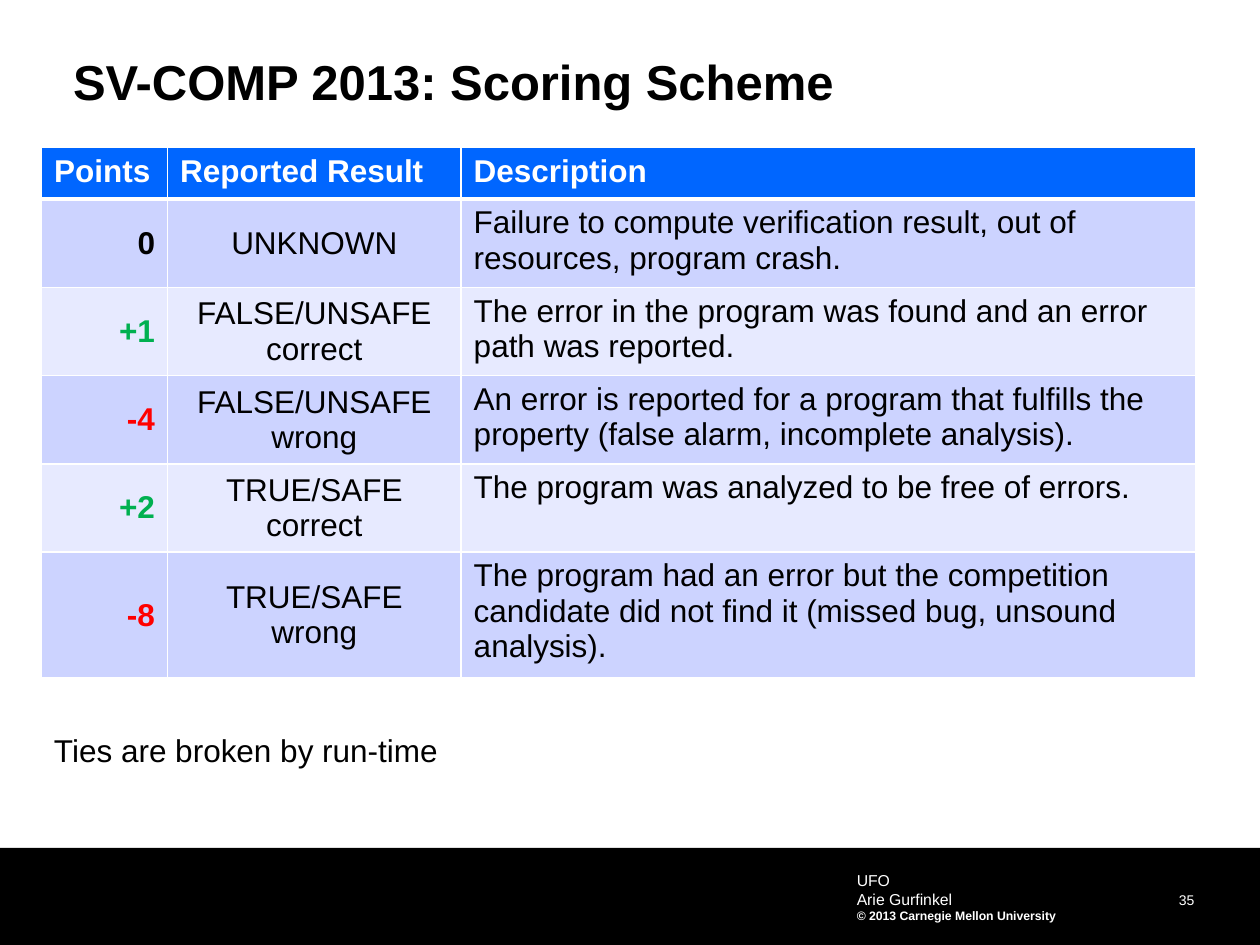
from dataclasses import dataclass

from lxml import etree
from pptx import Presentation
from pptx.dml.color import RGBColor
from pptx.enum.shapes import MSO_SHAPE
from pptx.enum.text import MSO_ANCHOR, MSO_AUTO_SIZE, PP_ALIGN
from pptx.oxml.ns import qn
from pptx.util import Inches, Pt

RECTANGLE = MSO_SHAPE.RECTANGLE
TOP, MIDDLE = MSO_ANCHOR.TOP, MSO_ANCHOR.MIDDLE
LEFT, CENTER, RIGHT = PP_ALIGN.LEFT, PP_ALIGN.CENTER, PP_ALIGN.RIGHT
FIT_SHAPE = MSO_AUTO_SIZE.SHAPE_TO_FIT_TEXT

SLIDE_WIDTH, SLIDE_HEIGHT = 10, 7.5
MARGIN = 0.33
COLUMN_WIDTHS = (1, 2.33, 5.83)
ROW_HEIGHT = 0.41


@dataclass(frozen=True)
class Theme:
    font: str = "Arial"
    title_size: float = 28
    body_size: float = 18
    footer_size: float = 9
    number_size: float = 8
    copyright_size: float = 7
    black: str = "000000"
    white: str = "FFFFFF"
    header: str = "0066FF"
    odd_row: str = "CCD3FF"
    even_row: str = "E7EAFF"
    gain: str = "00B050"
    loss: str = "FF0000"


THEME = Theme()

HEADINGS = ("Points", "Reported Result", "Description")
SCORES = (
    ("0", "UNKNOWN",
     "Failure to compute verification result, out of resources, program crash."),
    ("+1", "FALSE/UNSAFE correct",
     "The error in the program was found and an error path was reported."),
    ("-4", "FALSE/UNSAFE wrong",
     "An error is reported for a program that fulfills the property "
     "(false alarm, incomplete analysis)."),
    ("+2", "TRUE/SAFE correct",
     "The program was analyzed to be free of errors."),
    ("-8", "TRUE/SAFE wrong",
     "The program had an error but the competition candidate did not find it "
     "(missed bug, unsound analysis)."),
)


def write(paragraph, text, size, color, bold=False, align=LEFT):
    paragraph.text = text
    paragraph.alignment = align
    font = paragraph.font
    font.name, font.size, font.bold = THEME.font, Pt(size), bold
    font.color.rgb = RGBColor.from_string(color)


def add_text(slide, box, lines, insets=(0.1, 0.05), anchor=TOP, wrap=True,
             align=LEFT, spacing=None):
    """Add a text box; each line is (text, size, color, bold)."""
    frame = slide.shapes.add_textbox(*map(Inches, box)).text_frame
    frame.word_wrap = wrap
    frame.auto_size = FIT_SHAPE
    frame.vertical_anchor = anchor
    frame.margin_left = frame.margin_right = Inches(insets[0])
    frame.margin_top = frame.margin_bottom = Inches(insets[1])
    for index, line in enumerate(lines):
        paragraph = frame.add_paragraph() if index else frame.paragraphs[0]
        paragraph.line_spacing = spacing
        write(paragraph, *line, align=align)


def set_borders(cell, top, bottom):
    properties = cell._tc.get_or_add_tcPr()
    for side, width in (("L", 1), ("R", 1), ("T", top), ("B", bottom)):
        line = etree.SubElement(properties, qn(f"a:ln{side}"), w=str(Pt(width)))
        fill = etree.SubElement(line, qn("a:solidFill"))
        etree.SubElement(fill, qn("a:srgbClr"), val=THEME.white)


def score_color(points):
    return {"+": THEME.gain, "-": THEME.loss}.get(points[0], THEME.black)


def style_cell(cell, row, column, text):
    is_header = row == 0
    set_borders(cell, top=3 if row == 1 else 1, bottom=3 if is_header else 1)
    if is_header:
        fill, color, align = THEME.header, THEME.white, LEFT
    else:
        fill = THEME.odd_row if row % 2 else THEME.even_row
        color = score_color(text) if column == 0 else THEME.black
        align = (RIGHT, CENTER, LEFT)[column]
    cell.fill.solid()
    cell.fill.fore_color.rgb = RGBColor.from_string(fill)
    cell.vertical_anchor = TOP if is_header or column == 2 else MIDDLE
    write(cell.text_frame.paragraphs[0], text, THEME.body_size, color,
          bold=is_header or column == 0, align=align)


def add_score_table(slide):
    rows = (HEADINGS, *SCORES)
    table = slide.shapes.add_table(
        len(rows), len(HEADINGS), Inches(MARGIN), Inches(1.17),
        Inches(sum(COLUMN_WIDTHS)), Inches(ROW_HEIGHT * len(rows))).table
    for column, width in zip(table.columns, COLUMN_WIDTHS):
        column.width = Inches(width)
    for row, texts in enumerate(rows):
        for column, text in enumerate(texts):
            style_cell(table.cell(row, column), row, column, text)


def add_footer(slide):
    height = 0.77
    band = slide.shapes.add_shape(
        RECTANGLE, 0, Inches(SLIDE_HEIGHT - height), Inches(SLIDE_WIDTH), Inches(height))
    band.shadow.inherit = False
    band.fill.solid()
    band.fill.fore_color.rgb = RGBColor.from_string(THEME.black)
    band.line.fill.background()

    add_text(slide, (8.56, 7.03, 0.92, 0.18),
             [("35", THEME.number_size, THEME.white)],
             insets=(0, 0), anchor=MIDDLE, align=RIGHT, spacing=Pt(13))
    add_text(slide, (6.75, 6.86, 2.5, 0.52),
             [("UFO", THEME.footer_size, THEME.white),
              ("Arie Gurfinkel", THEME.footer_size, THEME.white),
              ("© 2013 Carnegie Mellon University", THEME.copyright_size,
               THEME.white, True)],
             insets=(0.05, 0.05), anchor=MIDDLE)


def main():
    presentation = Presentation()
    presentation.slide_width = Inches(SLIDE_WIDTH)
    presentation.slide_height = Inches(SLIDE_HEIGHT)
    slide = presentation.slides.add_slide(presentation.slide_layouts[6])

    # Footer band with page number and copyright
    add_footer(slide)

    # Title
    add_text(slide, (0.58, 0.46, 8.92, 0.42),
             [("SV-COMP 2013: Scoring Scheme", THEME.title_size, THEME.black, True)],
             insets=(0, 0), spacing=0.9)

    # Scoring table and the tie rule below it
    add_score_table(slide)
    add_text(slide, (MARGIN, 5.75, 3.28, 0.4),
             [("Ties are broken by run-time", THEME.body_size, THEME.black)],
             wrap=False)

    presentation.save("out.pptx")


if __name__ == "__main__":
    main()
